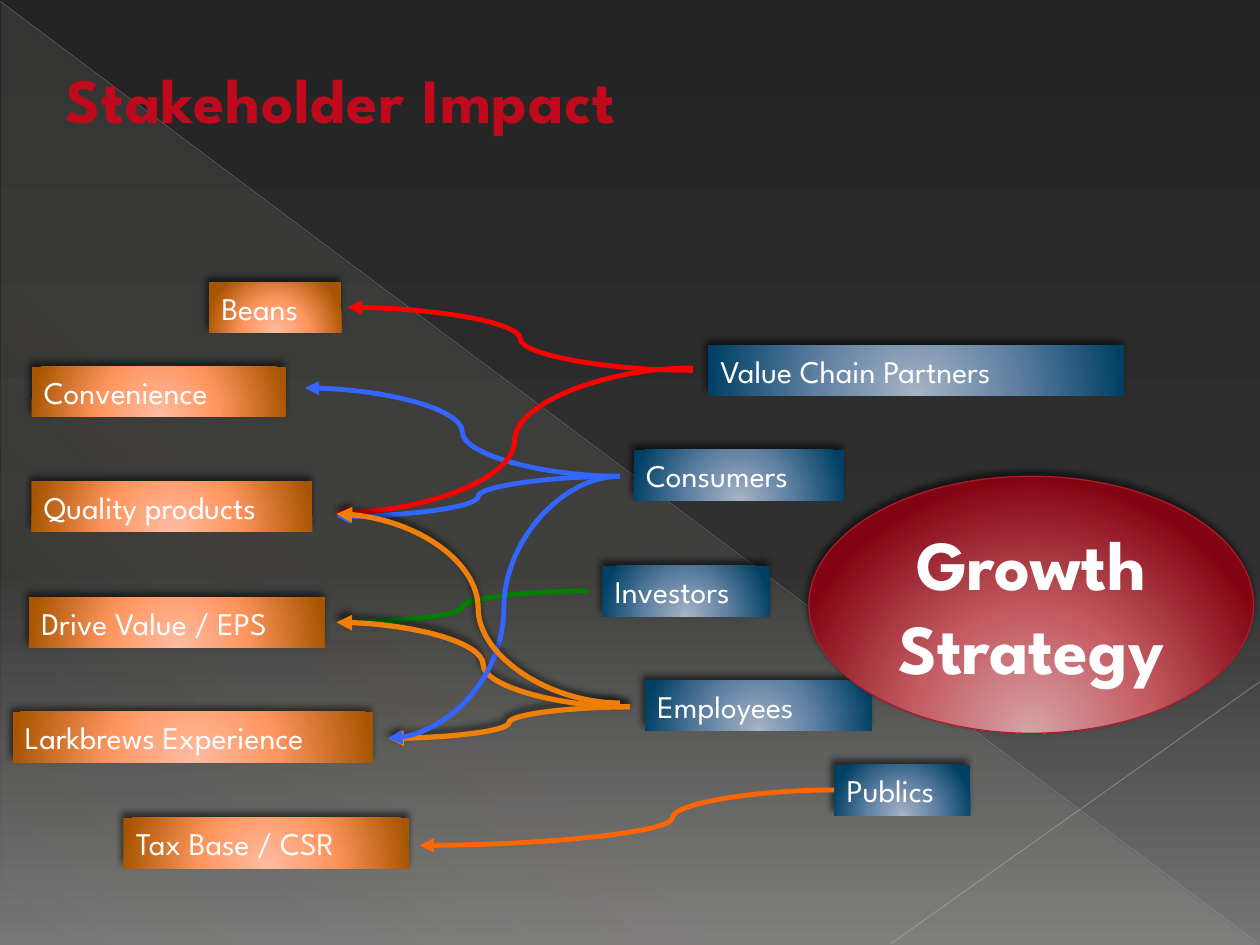
from lxml import etree
from pptx import Presentation
from pptx import util as u
from pptx.dml.color import RGBColor
from pptx.enum import shapes, text
from pptx.oxml.ns import qn

FONT = "League Spartan"
COLORS = {
    "white": "FFFFFF", "title": "BF091D", "oval_line": "AB1D2D",
    "rule_1": "B6B6B6", "rule_2": "BFBFBF", "shadow": "000000",
    "red": "FF0000", "blue": "3366FF", "green": "008000",
    "amber": "F07F09", "orange": "FF6600",
}
# Gradient stops: position %, colour, opacity %
GRADIENTS = {
    "page": [(0, "242424", 100), (60, "303030", 100), (100, "767676", 100)],
    "wedge": [(0, "E3DED1", 10), (70, "E3DED1", 8), (100, "E3DED1", 1)],
    "steel": [(0, "A6B4C5", 100), (46, "6282A4", 100), (100, "004065", 100)],
    "copper": [(0, "FFBCA2", 100), (46, "FF9660", 100), (100, "A75500", 100)],
    "crimson": [(0, "D6A3A6", 100), (46, "C45D63", 100), (100, "830412", 100)],
}


def add_xml(parent, tag, **attrs):
    return etree.SubElement(parent, qn(tag), {k: str(v) for k, v in attrs.items()})


def set_gradient(parent, name, angle=None):
    """Swap the solid fill for a linear gradient, or a radial one without an angle."""
    solid = parent.find(qn("a:solidFill"))
    grad = etree.Element(qn("a:gradFill"), rotWithShape="1")
    stops = add_xml(grad, "a:gsLst")
    for pos, color, opacity in GRADIENTS[name]:
        stop = add_xml(stops, "a:gs", pos=pos * 1000)
        clr = add_xml(stop, "a:srgbClr", val=color)
        if opacity < 100:
            add_xml(clr, "a:alpha", val=opacity * 1000)
    if angle is None:
        circle = add_xml(grad, "a:path", path="circle")
        add_xml(circle, "a:fillToRect", l=50000, t=155000, r=50000, b=-55000)
    else:
        add_xml(grad, "a:lin", ang=angle * 60000, scaled=0)
    parent.replace(solid, grad)


prs = Presentation()
prs.slide_width, prs.slide_height = u.Inches(10), u.Inches(7.5)
s = prs.slides.add_slide(prs.slide_layouts[5])
shadowed = []

# Background
s.background.fill.solid()
set_gradient(s.background._cSld.find(".//" + qn("p:bgPr")), "page", 90)

wedge = s.shapes.add_shape(shapes.MSO_SHAPE.RIGHT_TRIANGLE, u.Inches(0.01),
                           u.Inches(0.02), u.Inches(9.98), u.Inches(7.48))
wedge.shadow.inherit = False
wedge.line.fill.background()
wedge.fill.solid()
set_gradient(wedge._element.spPr, "wedge", 133)

for x1, y1, x2, y2, color, width, opacity in [
    (0, 0.01, 9.99, 7.49, "rule_1", 0.39, 35),
    (10, 5.41, 7.07, 7.49, "rule_2", 0.47, 45),
]:
    rule = s.shapes.add_connector(shapes.MSO_CONNECTOR.STRAIGHT, u.Inches(x1),
                                  u.Inches(y1), u.Inches(x2), u.Inches(y2))
    rule.line.width = u.Pt(width)
    rule.line.color.rgb = RGBColor.from_string(COLORS[color])
    add_xml(rule._element.spPr.find(".//" + qn("a:srgbClr")), "a:alpha", val=opacity * 1000)
    add_xml(rule._element.spPr, "a:effectLst")

# Title
title = s.shapes.title
title.left, title.top = u.Inches(0.42), u.Inches(0.5)
title.width, title.height = u.Inches(7.17), u.Inches(0.56)
tf = title.text_frame
tf.text = "Stakeholder Impact"
tf.vertical_anchor = text.MSO_ANCHOR.MIDDLE
tf.auto_size = text.MSO_AUTO_SIZE.NONE
p = tf.paragraphs[0]
p.alignment = text.PP_ALIGN.LEFT
p.font.name, p.font.size, p.font.bold = FONT, u.Pt(36), True
p.font.color.rgb = RGBColor.from_string(COLORS["title"])
p.runs[0].font._element.set("spc", "50")
s.shapes._spTree.append(title._element)  # bring in front of the background

# Stakeholders, their interests and the strategy oval
RECT, OVAL = shapes.MSO_SHAPE.RECTANGLE, shapes.MSO_SHAPE.OVAL
for label, left, top, width, height, kind, fill, size in [
    ("Consumers", 5.03, 3.57, 1.67, 0.4, RECT, "steel", 18),
    ("Value Chain Partners", 5.62, 2.74, 3.3, 0.4, RECT, "steel", 18),
    ("Employees", 5.12, 5.4, 1.8, 0.4, RECT, "steel", 18),
    ("Investors", 4.78, 4.49, 1.33, 0.4, RECT, "steel", 18),
    ("Publics", 6.62, 6.07, 1.08, 0.4, RECT, "steel", 18),
    ("Convenience", 0.25, 2.91, 2.02, 0.4, RECT, "copper", 18),
    ("Beans", 1.66, 2.24, 1.05, 0.4, RECT, "copper", 18),
    ("Drive Value / EPS", 0.23, 4.74, 2.35, 0.4, RECT, "copper", 18),
    ("Larkbrews Experience", 0.1, 5.65, 2.86, 0.4, RECT, "copper", 18),
    ("Tax Base / CSR", 0.98, 6.49, 2.27, 0.4, RECT, "copper", 18),
    ("Quality products", 0.25, 3.82, 2.23, 0.4, RECT, "copper", 18),
    ("Growth\nStrategy", 6.42, 3.78, 3.53, 2.04, OVAL, "crimson", 40),
]:
    sp = s.shapes.add_shape(kind, u.Inches(left), u.Inches(top),
                            u.Inches(width), u.Inches(height))
    sp.fill.solid()
    set_gradient(sp._element.spPr, fill)
    if kind == OVAL:
        sp.line.width = u.Pt(0.75)
        sp.line.color.rgb = RGBColor.from_string(COLORS["oval_line"])
    else:
        sp.line.fill.background()
    sp.shadow.inherit = False
    shadowed.append(sp)
    tf = sp.text_frame
    tf.text = label
    tf.word_wrap = True
    tf.auto_size = text.MSO_AUTO_SIZE.SHAPE_TO_FIT_TEXT
    for p in tf.paragraphs:
        p.alignment = text.PP_ALIGN.CENTER if kind == OVAL else text.PP_ALIGN.LEFT
        p.font.name, p.font.size, p.font.bold = FONT, u.Pt(size), kind == OVAL
        p.font.color.rgb = RGBColor.from_string(COLORS["white"])

# Curved arrows from stakeholder to interest; bend is the share of the way across
for x1, y1, x2, y2, color, bend in [
    (6.62, 6.27, 3.33, 6.71, "orange", 0.39),
    (5, 5.61, 3.08, 5.86, "amber", 0.5),
    (4.67, 4.69, 2.67, 4.94, "green", 0.5),
    (4.92, 3.78, 2.67, 4.1, "blue", 0.5),
    (4.92, 3.78, 2.42, 3.08, "blue", 0.5),
    (5.5, 2.94, 2.76, 2.44, "red", 0.5),
    (5.5, 2.92, 2.67, 4.07, "red", 0.5),
    (5, 5.61, 2.67, 4.94, "amber", 0.5),
    (4.92, 3.78, 3.08, 5.86, "blue", 0.5),
    (4.92, 5.58, 2.67, 4.08, "amber", 0.5),
]:
    arrow = s.shapes.add_connector(shapes.MSO_CONNECTOR.CURVE, u.Inches(x1),
                                   u.Inches(y1), u.Inches(x2), u.Inches(y2))
    arrow.line.width = u.Pt(3 if color == "amber" else 2.75)
    arrow.line.color.rgb = RGBColor.from_string(COLORS[color])
    spPr = arrow._element.spPr
    add_xml(spPr.find(qn("a:ln")), "a:tailEnd", type="triangle")
    add_xml(spPr, "a:effectLst")
    add_xml(spPr.find(".//" + qn("a:avLst")), "a:gd", name="adj1",
            fmla=f"val {round(bend * 100000)}")
    if color == "amber":
        shadowed.append(arrow)

# Soft shadows
for sp in shadowed:
    shadow = add_xml(sp._element.spPr.find(qn("a:effectLst")), "a:outerShdw",
                     blurRad=u.Pt(4), dist=u.Pt(3), dir=245 * 60000, rotWithShape=0)
    add_xml(add_xml(shadow, "a:srgbClr", val=COLORS["shadow"]), "a:alpha", val=60000)

prs.save("out.pptx")
